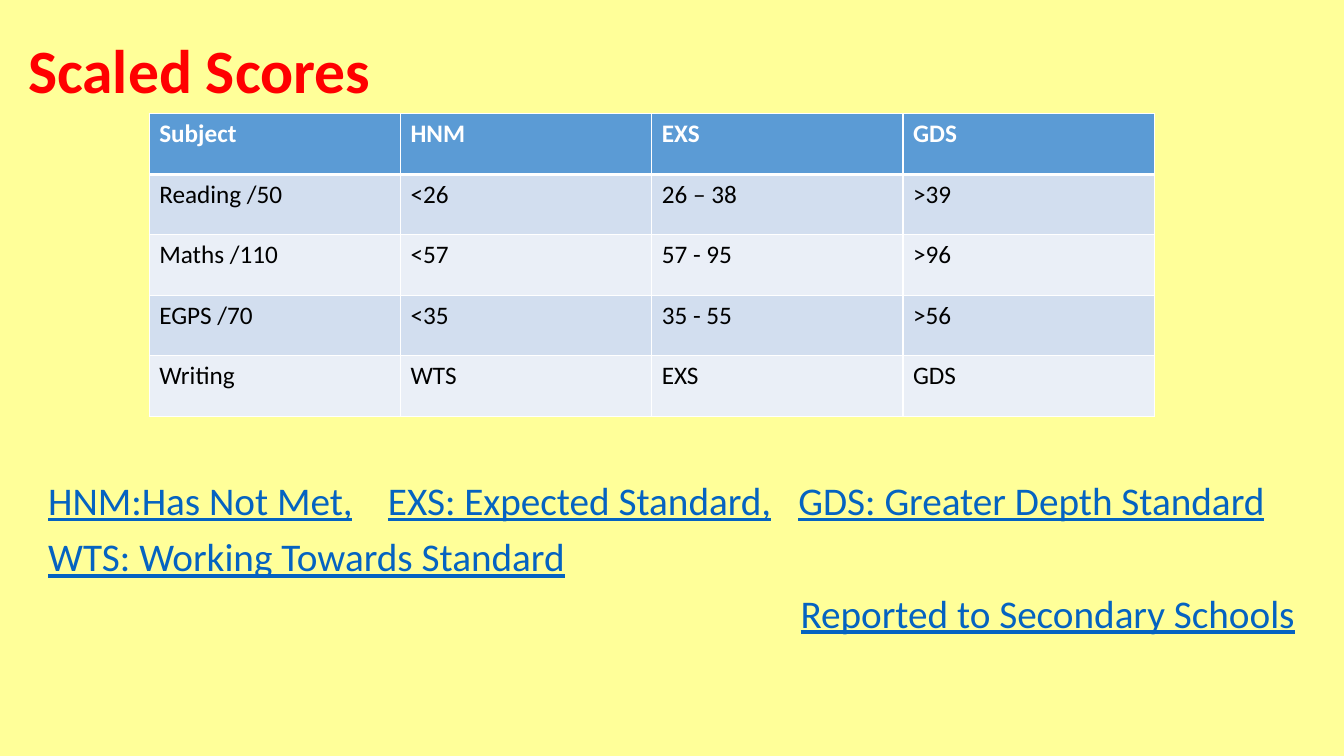
from lxml.etree import SubElement
from pptx import Presentation
from pptx.dml.color import RGBColor
from pptx.enum.text import MSO_ANCHOR as Anchor, PP_ALIGN as Align
from pptx.oxml.ns import qn
from pptx.util import Inches, Pt

TITLE = "Scaled Scores"
SCORES = [
    ("Subject", "HNM", "EXS", "GDS"),
    ("Reading /50", "<26", "26 – 38", ">39"),
    ("Maths /110", "<57", "57 - 95", ">96"),
    ("EGPS /70", "<35", "35 - 55", ">56"),
    ("Writing", "WTS", "EXS", "GDS"),
]
LEGEND = [
    ("HNM:Has Not Met,\tEXS: Expected Standard,\tGDS: Greater Depth Standard", Align.LEFT),
    ("WTS: Working Towards Standard", Align.LEFT),
    ("Reported to Secondary Schools", Align.RIGHT),
]
LEGEND_TABS = (3.37, 7.44)

THEME = {
    "background": "FFFF99",
    "header": "5B9BD5",
    "bands": ("D2DEEF", "EAEFF7"),
    "border": "FFFFFF",
    "title": {"size": 44, "color": "FF0000", "bold": True},
    "heading": {"size": 18, "color": "FFFFFF", "bold": True},
    "cell": {"size": 18, "color": "000000", "bold": False},
    "legend": {"size": 28, "color": "0563C1", "underline": True},
}

TITLE_AREA = (0.18, 0, 11.5, 1.45)
TABLE_AREA = (1.48, 1.13, 9.97, 3)
LEGEND_AREA = (0.38, 4.73, 12.56, 2.63)


def add_span(para, text, style):
    span = para.add_run()
    span.text = text
    formats = {**style, "name": "Calibri", "size": Pt(style["size"])}
    span.font.color.rgb = RGBColor.from_string(formats.pop("color"))
    for name, value in formats.items():
        setattr(span.font, name, value)


def add_text(page, area, lines, style, anchor):
    frame = page.shapes.add_textbox(*map(Inches, area)).text_frame
    frame.word_wrap = True
    frame.vertical_anchor = anchor
    for index, (text, align) in enumerate(lines):
        para = frame.add_paragraph() if index else frame.paragraphs[0]
        layout = {"alignment": align, "line_spacing": 0.9,
                  "space_before": Pt(10 if index else 0)}
        for name, value in layout.items():
            setattr(para, name, value)
        add_span(para, text, style)
    return frame


def add_tabs(para, positions):
    tabs = SubElement(para._p.get_or_add_pPr(), qn("a:tabLst"))
    for position in positions:
        SubElement(tabs, qn("a:tab"), pos=str(Inches(position)), algn="l")


def add_borders(cell, widths):
    """Draw the left, right, top and bottom lines, widths in points."""
    properties = cell._tc.get_or_add_tcPr()
    for side, width in zip("LRTB", widths):
        line = SubElement(properties, qn(f"a:ln{side}"), w=str(Pt(width)))
        fill = SubElement(line, qn("a:solidFill"))
        SubElement(fill, qn("a:srgbClr"), val=THEME["border"])


def add_scores(page):
    table = page.shapes.add_table(len(SCORES), len(SCORES[0]), *map(Inches, TABLE_AREA)).table
    for row, values in enumerate(SCORES):
        fill = THEME["bands"][(row - 1) % 2] if row else THEME["header"]
        style = THEME["cell" if row else "heading"]
        widths = (1, 1, 3 if row == 1 else 1, 1 if row else 3)
        for column, text in enumerate(values):
            cell = table.cell(row, column)
            add_borders(cell, widths)
            cell.fill.solid()
            cell.fill.fore_color.rgb = RGBColor.from_string(fill)
            add_span(cell.text_frame.paragraphs[0], text, style)


def main():
    deck = Presentation()
    deck.slide_width, deck.slide_height = Inches(13.33), Inches(7.5)
    page = deck.slides.add_slide(deck.slide_layouts[6])
    page.background.fill.solid()
    page.background.fill.fore_color.rgb = RGBColor.from_string(THEME["background"])

    add_text(page, TITLE_AREA, [(TITLE, Align.LEFT)], THEME["title"], Anchor.MIDDLE)
    legend = add_text(page, LEGEND_AREA, LEGEND, THEME["legend"], Anchor.TOP)
    add_tabs(legend.paragraphs[0], LEGEND_TABS)
    add_scores(page)
    deck.save("out.pptx")


if __name__ == "__main__":
    main()
